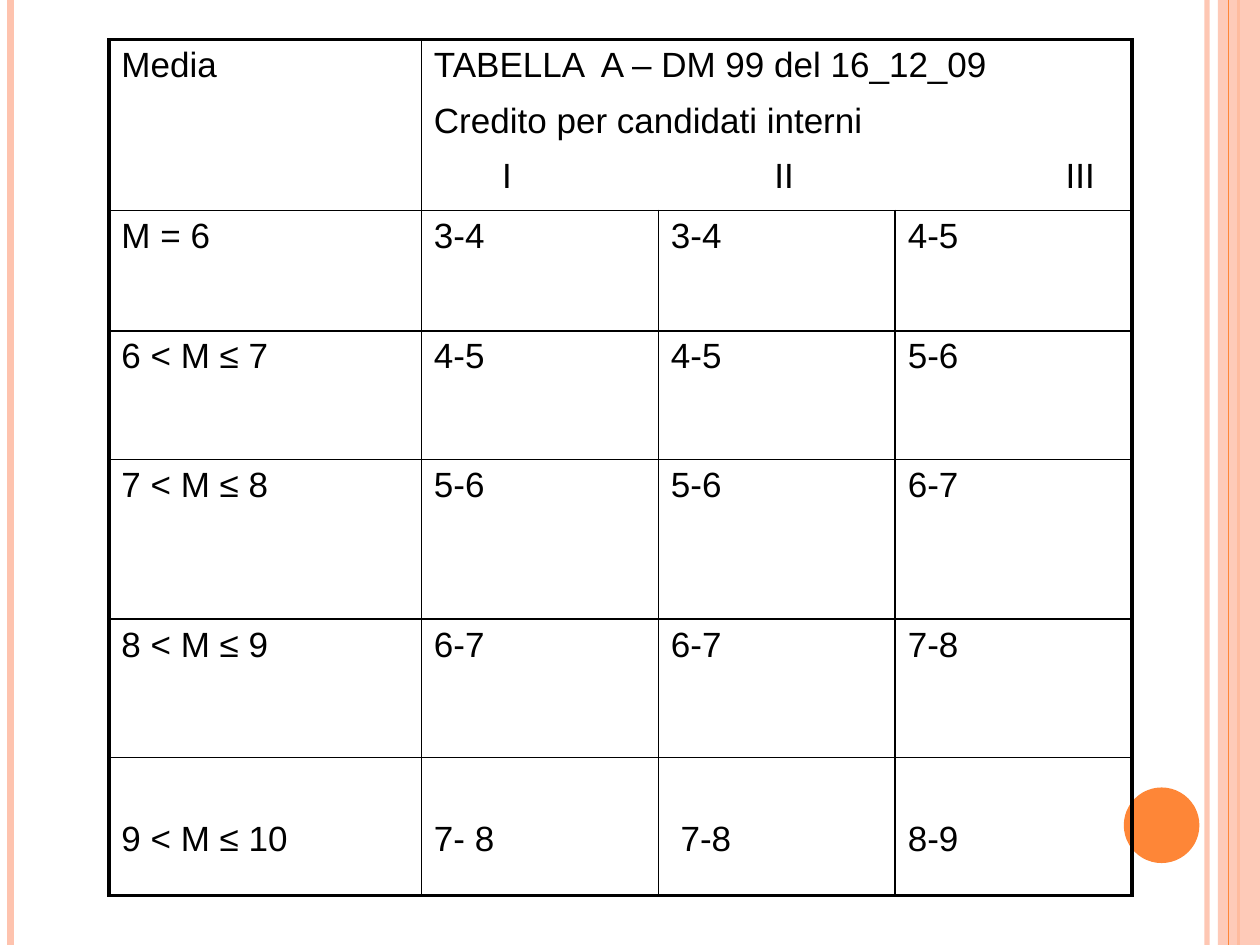
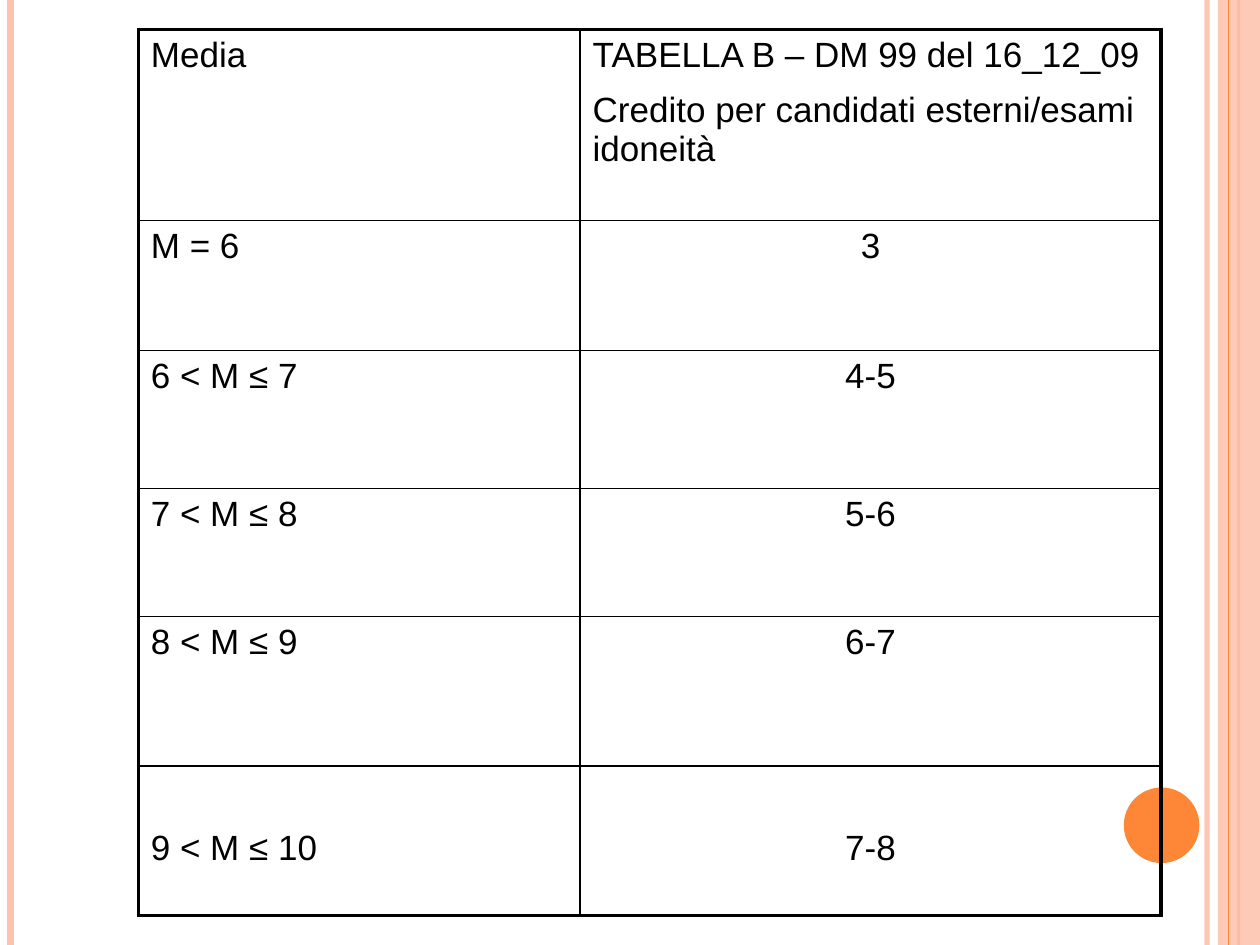
import pptx
import pptx.dml.color
import pptx.enum.shapes
import pptx.enum.text
import pptx.oxml
import pptx.oxml.ns
import pptx.util
from lxml import etree

Pt = pptx.util.Pt
ALIGN = pptx.enum.text.PP_ALIGN
SHAPE = pptx.enum.shapes.MSO_SHAPE

TABLES = [
    {
        "left": 62.2, "top": 22.7,
        "columns": [178.6, 135.4, 135.4, 135.4],
        "rows": [97.5, 68.9, 73.4, 91.4, 78.9, 78.9],
        "value_align": ALIGN.LEFT,
        "header": ["Media", "TABELLA  A – DM 99 del 16_12_09\n"
                            "Credito per candidati interni\n\tI\tII\tIII"],
        "body": [
            ["M = 6", "3-4", "3-4", "4-5"],
            ["6 < M ≤ 7", "4-5", "4-5", "5-6"],
            ["7 < M ≤ 8", "5-6", "5-6", "6-7"],
            ["8 < M ≤ 9", "6-7", "6-7", "7-8"],
            ["9 < M ≤ 10", "7- 8", " 7-8", "8-9"],
        ],
    },
    {
        "left": 79, "top": 16.8,
        "columns": [252.5, 332],
        "rows": [109.2, 74.3, 78.9, 73.1, 85.4, 85.4],
        "value_align": ALIGN.CENTER,
        "header": ["Media", "TABELLA B – DM 99 del 16_12_09\n"
                            "Credito per candidati esterni/esami idoneità"],
        "body": [
            ["M = 6", "3"],
            ["6 < M ≤ 7", "4-5"],
            ["7 < M ≤ 8", "5-6"],
            ["8 < M ≤ 9", "6-7"],
            ["9 < M ≤ 10", "7-8"],
        ],
    },
]


class Theme:
    width, height = 720, 540
    orange, peach, black = "FE8637", "FEC3AE", "000000"
    font, text_size, paragraph_gap = "Arial", 20, 9.3
    outer_border, inner_border = 2.25, 1
    class_tabs = [39, 194.5, 361]
    last_row_margin = 36


# x, colour, width, opacity in percent
STRIPES_BEHIND_BAND = [
    (689.7, Theme.peach, 3, 93),
    (6, Theme.peach, 4.5, 100),
    (707.8, Theme.orange, 1.5, 100),
]
STRIPES_OVER_BAND = [(702, Theme.orange, 0.75, 100)]
# preset, left, top, width, height, colour, opacity in percent
BAND = (SHAPE.RECTANGLE, 696, 0, 24, 540, Theme.peach, 87)
DISC = (SHAPE.OVAL, 642.2, 450, 43.2, 43.2, Theme.orange, 100)


def rgb(value):
    return pptx.dml.color.RGBColor.from_string(value)


def set_attributes(target, values):
    for name, value in values.items():
        setattr(target, name, value)


def add_child(parent, tag, **attributes):
    return etree.SubElement(parent, pptx.oxml.ns.qn(tag), attributes)


def set_opacity(shape, percent):
    if percent < 100:
        for color in shape.element.spPr.iter(pptx.oxml.ns.qn("a:srgbClr")):
            add_child(color, "a:alpha", val=str(percent * 1000))


def add_stripe(slide, x, color, width, opacity):
    stripe = slide.shapes.add_connector(
        pptx.enum.shapes.MSO_CONNECTOR.STRAIGHT,
        Pt(x), Pt(0), Pt(x), Pt(Theme.height))
    stripe.line.color.rgb = rgb(color)
    stripe.line.width = Pt(width)
    set_opacity(stripe, opacity)
    add_child(stripe.element.spPr, "a:effectLst")
    return stripe


def add_filled_shape(slide, preset, left, top, width, height, color, opacity):
    shape = slide.shapes.add_shape(preset, Pt(left), Pt(top), Pt(width), Pt(height))
    shape.shadow.inherit = False
    shape.fill.solid()
    shape.fill.fore_color.rgb = rgb(color)
    shape.line.fill.background()
    set_opacity(shape, opacity)
    return shape


def decorate_layout(layout, slide):
    """Draw the side decoration on a slide, then move it to the shared layout."""
    parts = [add_stripe(slide, *stripe) for stripe in STRIPES_BEHIND_BAND]
    parts.append(add_filled_shape(slide, *BAND))
    parts += [add_stripe(slide, *stripe) for stripe in STRIPES_OVER_BAND]
    parts.append(add_filled_shape(slide, *DISC))
    for part in parts:
        layout.shapes.element.append(part.element)


def set_borders(cell, outer_edges):
    """Put a heavy line on each outer edge of the table and a thin one elsewhere."""
    properties = cell._tc.get_or_add_tcPr()
    for index, (edge, is_outer) in enumerate(outer_edges.items()):
        width = Theme.outer_border if is_outer else Theme.inner_border
        border = pptx.oxml.parse_xml(
            f'<a:{edge} {pptx.oxml.ns.nsdecls("a")} w="{Pt(width)}"><a:solidFill>'
            f'<a:srgbClr val="{Theme.black}"/></a:solidFill></a:{edge}>')
        properties.insert(index, border)


def write_cell(cell, text, align):
    cell.text = text
    for paragraph in cell.text_frame.paragraphs:
        set_attributes(paragraph, {"alignment": align,
                                   "space_before": Pt(Theme.paragraph_gap)})
        for run in paragraph.runs:
            set_attributes(run.font, {"name": Theme.font, "size": Pt(Theme.text_size)})
            run.font.color.rgb = rgb(Theme.black)
        if "\t" in paragraph.text:
            tab_list = add_child(paragraph._p.get_or_add_pPr(), "a:tabLst")
            for position in Theme.class_tabs:
                add_child(tab_list, "a:tab", pos=str(Pt(position)), algn="l")


def add_credit_table(slide, content):
    columns, rows = content["columns"], content["rows"]
    table = slide.shapes.add_table(
        len(rows), len(columns), Pt(content["left"]), Pt(content["top"]),
        Pt(sum(columns)), Pt(sum(rows))).table
    set_attributes(table, {"first_row": False, "horz_banding": False})
    for column, width in zip(table.columns, columns):
        column.width = Pt(width)
    for row, height in zip(table.rows, rows):
        row.height = Pt(height)

    last_row, last_column = len(rows) - 1, len(columns) - 1
    if last_column > 1:
        table.cell(0, 1).merge(table.cell(0, last_column))
    for r, texts in enumerate([content["header"], *content["body"]]):
        for c in range(len(columns)):
            cell = table.cell(r, c)
            cell.fill.background()
            right = c + cell.span_width - 1 if cell.is_merge_origin else c
            set_borders(cell, {"lnL": c == 0, "lnR": right == last_column,
                               "lnT": r == 0, "lnB": r == last_row})
            if r == last_row:
                cell.margin_top = Pt(Theme.last_row_margin)
            if c < len(texts):
                is_value = r > 0 and c > 0
                write_cell(cell, texts[c],
                           content["value_align"] if is_value else ALIGN.LEFT)


def main():
    presentation = pptx.Presentation()
    set_attributes(presentation, {"slide_width": Pt(Theme.width),
                                  "slide_height": Pt(Theme.height)})
    layout = presentation.slide_layouts[6]
    slides = [presentation.slides.add_slide(layout) for _ in TABLES]
    decorate_layout(layout, slides[0])
    for slide, content in zip(slides, TABLES):
        add_credit_table(slide, content)
    presentation.save("out.pptx")


if __name__ == "__main__":
    main()
